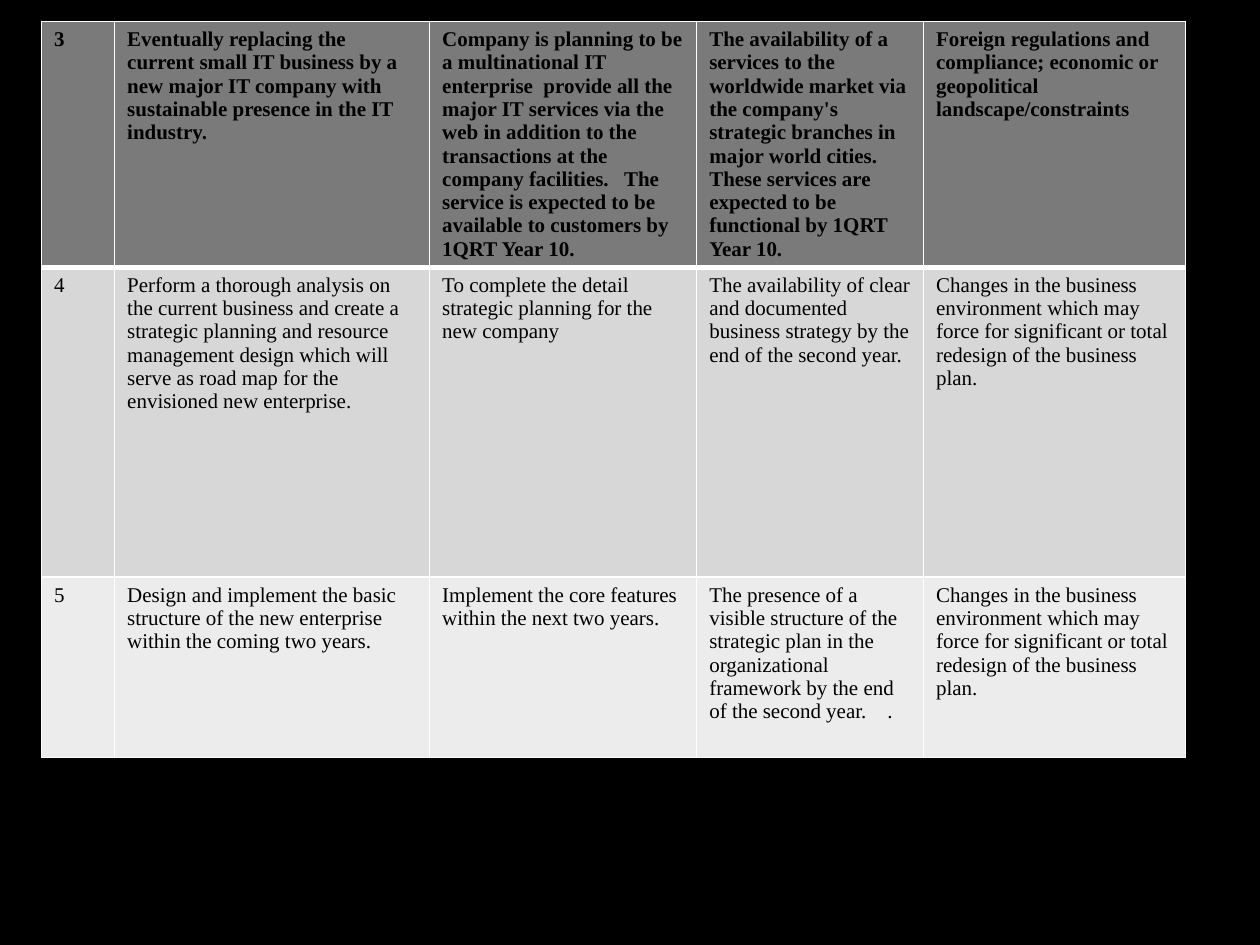
import dataclasses

import lxml.etree
import pptx
import pptx.dml.color
import pptx.oxml.ns
import pptx.util


@dataclasses.dataclass(frozen=True)
class Theme:
    font: str = "Times New Roman"
    text_size: int = 12
    text: str = "000000"
    background: str = "000000"
    border: str = "FFFFFF"
    row_fills: tuple = ("7A7A7A", "D7D7D7", "ECECEC")
    thin_line: int = 1
    heavy_line: int = 3


def color(value):
    return pptx.dml.color.RGBColor.from_string(value)


class SlideBuilder:
    """Holds the theme and current slide; lengths are units of a 100 x 75 grid."""

    def __init__(self, deck, theme):
        self.theme = theme
        self.unit = deck.slide_width / 100
        self.page = deck.slides.add_slide(deck.slide_layouts[6])

    def length(self, units):
        return pptx.util.Emu(round(units * self.unit))

    def background(self):
        fill = self.page.background.fill
        fill.solid()
        fill.fore_color.rgb = color(self.theme.background)

    def table(self, left, top, widths, heights, rows):
        frame = self.page.shapes.add_table(
            len(rows), len(widths), self.length(left), self.length(top),
            self.length(sum(widths)), self.length(sum(heights)))
        grid = frame.table
        for column, width in zip(grid.columns, widths):
            column.width = self.length(width)
        for row, height in zip(grid.rows, heights):
            row.height = self.length(height)
        for row_index, texts in enumerate(rows):
            for column_index, text in enumerate(texts):
                self.cell(grid.cell(row_index, column_index), text, row_index)

    def cell(self, cell, text, row_index):
        theme = self.theme
        cell.text = text
        font = cell.text_frame.paragraphs[0].font
        font.name = theme.font
        font.size = pptx.util.Pt(theme.text_size)
        font.bold = row_index == 0
        font.color.rgb = color(theme.text)
        # Both cells that share the rule under the first row carry its width
        above = theme.heavy_line if row_index == 1 else theme.thin_line
        below = theme.heavy_line if row_index == 0 else theme.thin_line
        self.borders(cell, {"lnL": theme.thin_line, "lnR": theme.thin_line,
                            "lnT": above, "lnB": below})
        cell.fill.solid()
        cell.fill.fore_color.rgb = color(theme.row_fills[row_index])

    def borders(self, cell, sides):
        qn = pptx.oxml.ns.qn
        properties = cell._tc.get_or_add_tcPr()
        for side, width in sides.items():
            line = lxml.etree.SubElement(
                properties, qn(f"a:{side}"), w=str(pptx.util.Pt(width)))
            fill = lxml.etree.SubElement(line, qn("a:solidFill"))
            lxml.etree.SubElement(fill, qn("a:srgbClr"), val=self.theme.border)


BUSINESS_RISK = ("Changes in the business environment which may force for "
                 "significant or total redesign of the business plan.")

# Number, objective, target, measure, risk
OBJECTIVES = [
    ("3",
     "Eventually replacing the current small IT business by a new major IT "
     "company with sustainable presence in the IT industry.",
     "Company is planning to be a multinational IT enterprise  provide all the "
     "major IT services via the web in addition to the transactions at the "
     "company facilities.   The service is expected to be available to "
     "customers by 1QRT Year 10.",
     "The availability of a services to the worldwide market via the company's "
     "strategic branches in major world cities. These services are expected to "
     "be functional by 1QRT Year 10.",
     "Foreign regulations and compliance; economic or geopolitical "
     "landscape/constraints"),
    ("4",
     "Perform a thorough analysis on the current business and create a "
     "strategic planning and resource management design which will serve as "
     "road map for the envisioned new enterprise.",
     "To complete the detail strategic planning for the new company",
     "The availability of clear and documented business strategy by the end of "
     "the second year.",
     BUSINESS_RISK),
    ("5",
     "Design and implement the basic structure of the new enterprise within "
     "the coming two years.",
     "Implement the core features within the next two years.",
     "The presence of a visible structure of the strategic plan in the "
     "organizational framework by the end of the second year.    .",
     BUSINESS_RISK),
]


def main():
    deck = pptx.Presentation()
    deck.slide_width = pptx.util.Inches(10)
    deck.slide_height = pptx.util.Inches(7.5)

    builder = SlideBuilder(deck, Theme())
    builder.background()
    # Objectives table
    builder.table(left=3.3, top=1.7, widths=(5.8, 25, 21.2, 18, 20.8),
                  heights=(19.4, 24.6, 14.3), rows=OBJECTIVES)
    deck.save("out.pptx")


if __name__ == "__main__":
    main()
